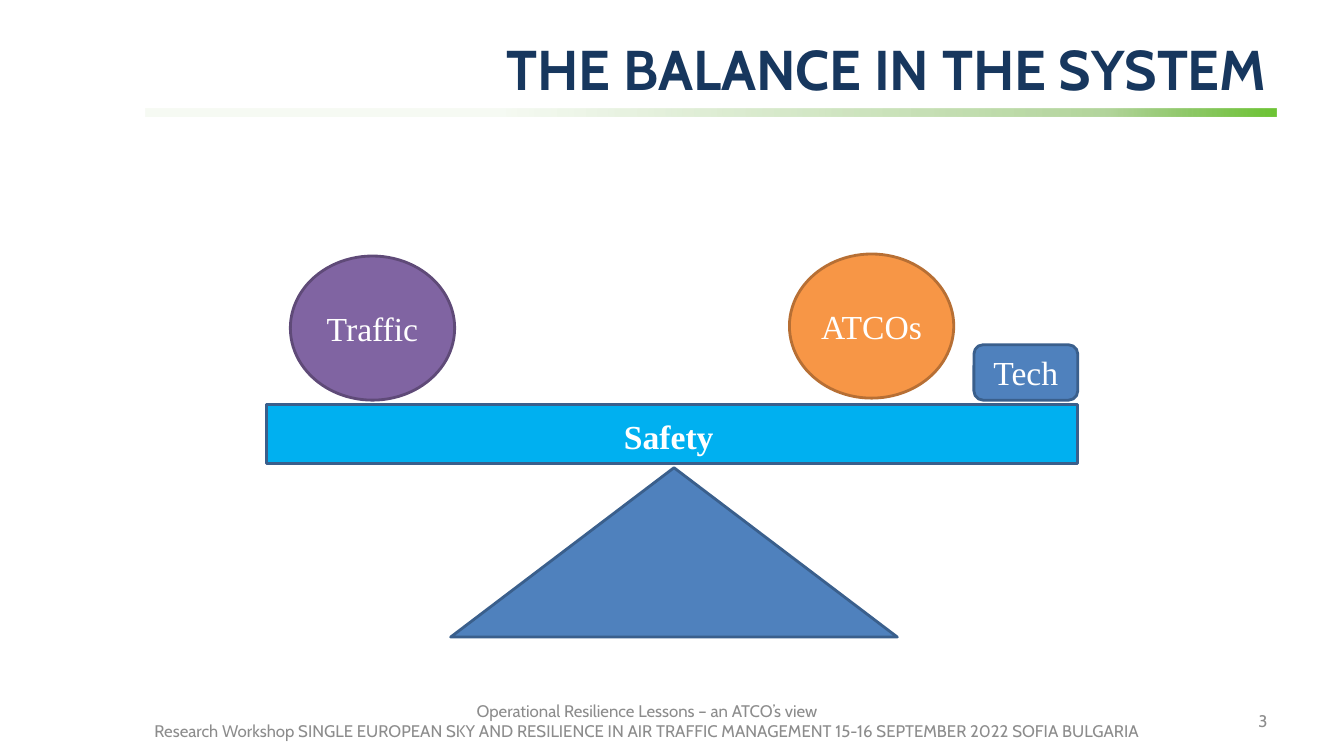
from lxml import etree
from pptx import Presentation
from pptx.dml.color import RGBColor as RGB
from pptx.enum.shapes import MSO_SHAPE as Kind
from pptx.enum.text import MSO_ANCHOR as Anchor, MSO_AUTO_SIZE as Auto, PP_ALIGN as Align
from pptx.oxml.ns import qn
from pptx.util import Emu, Pt

SCALE = 9144
WHITE = RGB(0xFF, 0xFF, 0xFF)
NAVY = RGB(0x17, 0x37, 0x5E)
GRAY = RGB(0x8C, 0x8C, 0x8C)
BLUE = RGB(0x4F, 0x81, 0xBD)
EDGE = RGB(0x3A, 0x5F, 0x8C)
SKY = RGB(0x00, 0xB0, 0xF0)
PURPLE = RGB(0x80, 0x64, 0xA2)
PLUM = RGB(0x5F, 0x4A, 0x78)
ORANGE = RGB(0xF7, 0x96, 0x46)
RUST = RGB(0xB7, 0x6F, 0x34)
GREEN = RGB(0x5D, 0xA6, 0x2C)
LIME = RGB(0x6E, 0xC5, 0x35)


def px(*sizes):
    return [Emu(size * SCALE) for size in sizes]


class Board:
    sans = "Cabin"
    serif = "Times New Roman"

    def __init__(self, deck):
        self.slide = deck.slides.add_slide(deck.slide_layouts[5])

    def label(self, frame, text, font, size, color, align, bold=False):
        frame.text = text
        for para in frame.paragraphs:
            para.alignment = align
            for run in para.runs:
                run.font.name = font
                run.font.size = Pt(size)
                run.font.bold = bold
                run.font.color.rgb = color

    def title(self, box, text):
        head = self.slide.shapes.title
        head.left, head.top, head.width, head.height = px(*box)
        frame = head.text_frame
        self.label(frame, text, self.sans, 40, NAVY, Align.RIGHT, True)
        frame.vertical_anchor = Anchor.TOP
        frame.auto_size = Auto.SHAPE_TO_FIT_TEXT
        frame.paragraphs[0].line_spacing = 0.9

    def text(self, box, text, font, size, color, align, bold=False, anchor=Anchor.MIDDLE):
        frame = self.slide.shapes.add_textbox(*px(*box)).text_frame
        frame.word_wrap = True
        frame.vertical_anchor = anchor
        self.label(frame, text, font, size, color, align, bold)

    def shape(self, kind, box, fill, edge, text="", inset=0):
        item = self.slide.shapes.add_shape(kind, *px(*box))
        item.shadow.inherit = False
        item.fill.solid()
        item.fill.fore_color.rgb = fill
        item.line.color.rgb = edge
        item.line.width = Pt(2)
        if text:
            frame = item.text_frame
            frame.margin_left, frame.margin_top, frame.margin_right, frame.margin_bottom = px(*[inset] * 4)
            frame.vertical_anchor = Anchor.MIDDLE
            self.label(frame, text, self.serif, 24, WHITE, Align.CENTER)

    def fade(self, box, stops):
        band = self.slide.shapes.add_shape(Kind.RECTANGLE, *px(*box))
        band.shadow.inherit = False
        band.line.fill.background()
        band.fill.gradient()
        band.fill.gradient_angle = 0
        group = band.element.spPr.find(qn("a:gradFill")).find(qn("a:gsLst"))
        for old in list(group):
            group.remove(old)
        for place, color, alpha in stops:
            stop = etree.SubElement(group, qn("a:gs"), pos=str(place * 1000))
            tint = etree.SubElement(stop, qn("a:srgbClr"), val=str(color))
            etree.SubElement(tint, qn("a:alpha"), val=str(alpha * 1000))


def main():
    deck = Presentation()
    deck.slide_width, deck.slide_height = px(1333, 750)
    board = Board(deck)

    board.fade((144, 108, 1122, 8), [(31, GREEN, 5), (85, GREEN, 47), (100, LIME, 100)])
    board.text((956, 695, 311, 40), "3", board.sans, 12, GRAY, Align.RIGHT)
    board.text(
        (92, 695, 1100, 40),
        "Operational Resilience Lessons – an ATCO’s view\n"
        "Research Workshop SINGLE EUROPEAN SKY AND RESILIENCE IN AIR TRAFFIC MANAGEMENT "
        "15-16 SEPTEMBER 2022 SOFIA BULGARIA",
        board.sans, 12, GRAY, Align.CENTER)
    board.title((450, 37, 816, 71), "THE BALANCE IN THE SYSTEM")

    board.shape(Kind.OVAL, (288, 254, 163, 143), PURPLE, PLUM, "Traffic")
    board.shape(Kind.OVAL, (783, 252, 163, 143), ORANGE, RUST, "ATCOs", 4)
    board.shape(Kind.ROUNDED_RECTANGLE, (966, 342, 103, 55), BLUE, EDGE, "Tech")
    board.shape(Kind.ISOSCELES_TRIANGLE, (447, 464, 443, 168), BLUE, EDGE)
    board.shape(Kind.RECTANGLE, (264, 401, 805, 59), SKY, EDGE)
    board.text((609, 408, 119, 50), "Safety", board.serif, 24, WHITE, Align.LEFT, True, Anchor.TOP)

    deck.save("out.pptx")


if __name__ == "__main__":
    main()
